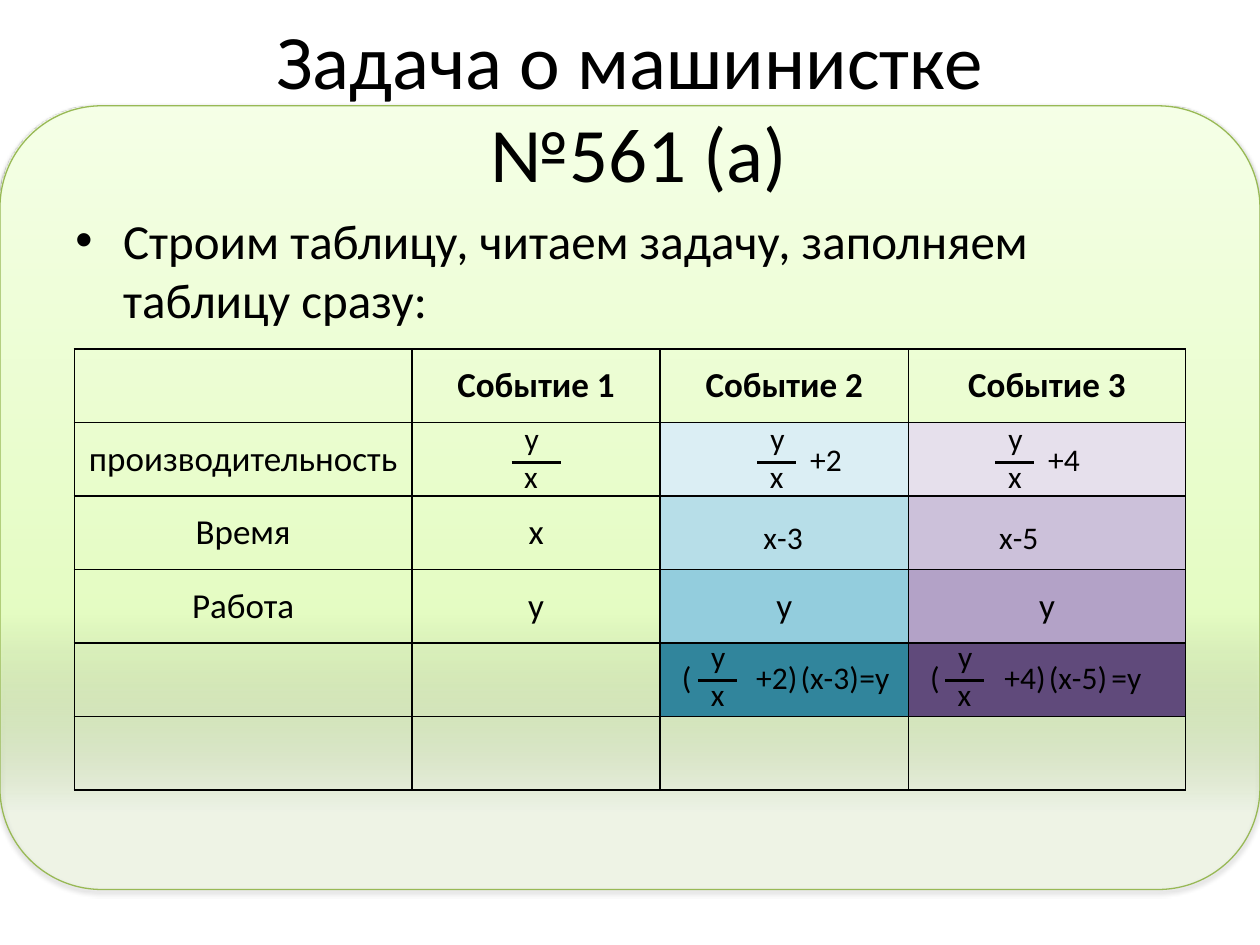
from lxml.etree import SubElement
from pptx import Presentation
from pptx.dml.color import RGBColor
from pptx.enum.shapes import MSO_CONNECTOR, MSO_SHAPE
from pptx.enum.text import MSO_ANCHOR, MSO_AUTO_SIZE, PP_ALIGN
from pptx.oxml import parse_xml
from pptx.oxml.ns import nsdecls, qn
from pptx.util import Inches, Pt

prs = Presentation()
prs.slide_width, prs.slide_height = Inches(10), Inches(7.5)
W, H = prs.slide_width, prs.slide_height
s = prs.slides.add_slide(prs.slide_layouts[5])


def share(x, y, w, h):
    return int(W * x / 100), int(H * y / 100), int(W * w / 100), int(H * h / 100)


def style(p, size, bold=False, align=PP_ALIGN.CENTER):
    p.alignment = align
    for r in p.runs:
        r.font.name, r.font.size, r.font.bold = "Calibri", Pt(size), bold
        r.font.color.rgb = RGBColor.from_string("000000")


card = s.shapes.add_shape(MSO_SHAPE.ROUNDED_RECTANGLE, *share(0, 11.2, 100, 82.93))
card.adjustments[0] = 0.13
card.line.color.rgb = RGBColor.from_string("98B955")
card.line.width = Pt(0.75)
card.fill.gradient()
card.fill.gradient_angle = 90
stops = card._element.spPr.find(qn("a:gradFill")).find(qn("a:gsLst"))
for stop in list(stops):
    stops.remove(stop)
for pos, color, alpha in ((10, "DAFDA7", 14), (35, "E4FCC2", 100), (100, "F5FFE7", 100)):
    stop = SubElement(stops, qn("a:gs"), pos=str(pos * 1000))
    rgb = SubElement(stop, qn("a:srgbClr"), val=color)
    if alpha < 100:
        SubElement(rgb, qn("a:alpha"), val=str(alpha * 1000))
card._element.spPr.append(parse_xml(
    f'<a:effectLst {nsdecls("a")}><a:outerShdw blurRad="{Pt(3.1)}" dist="{Pt(1.6)}" '
    'dir="5400000" rotWithShape="0"><a:srgbClr val="000000"><a:alpha val="38000"/>'
    '</a:srgbClr></a:outerShdw></a:effectLst>'))
s.shapes._spTree.insert(2, card._element)

title = s.shapes.title
title.left, title.top, title.width, title.height = share(5.7, -0.4, 90, 23.07)
tf = title.text_frame
tf.text = "Задача о машинистке \v№561 (а)"
tf.vertical_anchor = MSO_ANCHOR.MIDDLE
tf.auto_size = MSO_AUTO_SIZE.NONE
style(tf.paragraphs[0], 44)

body = s.shapes.add_textbox(*share(5, 21.6, 90, 66))
tf = body.text_frame
tf.word_wrap = True
tf.text = "Строим таблицу, читаем задачу, заполняем таблицу сразу:"
p = tf.paragraphs[0]
style(p, 28, align=PP_ALIGN.LEFT)
p.space_before = Pt(5.6)
pPr = p._p.get_or_add_pPr()
pPr.set("marL", str(Inches(0.38)))
pPr.set("indent", str(-Inches(0.38)))
SubElement(pPr, qn("a:buFont"), typeface="Arial")
SubElement(pPr, qn("a:buChar"), char="•")

rows = [
    ["", "Событие 1", "Событие 2", "Событие 3"],
    ["производительность", "", "", ""],
    ["Время", "х", "", ""],
    ["Работа", "у", "у", "у"],
    ["", "", "", ""],
    ["", "", "", ""],
]
fills = {
    2: ["DBEEF4", "B7DEE8", "93CDDD", "31859C"],
    3: ["E6E0EC", "CCC1DA", "B3A2C7", "604A7B"],
}
table = s.shapes.add_table(6, 4, *share(5.9, 36.93, 88.2, 46.67)).table
table.first_row = table.horz_banding = False
for column, width in zip(table.columns, (26.8, 19.7, 19.7, 22)):
    column.width = int(W * width / 100)
for i, row in enumerate(rows):
    for j, text in enumerate(row):
        cell = table.cell(i, j)
        cell.text = text
        cell.vertical_anchor = MSO_ANCHOR.MIDDLE
        style(cell.text_frame.paragraphs[0], 20, bold=i == 0)
        tcPr = cell._tc.get_or_add_tcPr()
        for side in ("lnL", "lnR", "lnT", "lnB"):
            ln = SubElement(tcPr, qn(f"a:{side}"), w=str(Pt(1)))
            SubElement(SubElement(ln, qn("a:solidFill")), qn("a:srgbClr"), val="000000")
        if j in fills and 1 <= i <= 4:
            cell.fill.solid()
            cell.fill.fore_color.rgb = RGBColor.from_string(fills[j][i - 1])
        else:
            cell.fill.background()

rate, product = 43.73, 66.8
labels = [
    ("х-3", 58.7, 54.13, 6.9), ("х-5", 77.4, 54.13, 6.9),
    ("+2", 63.2, rate + 2.13, 4.7), ("+4", 82.1, rate + 2.13, 4.7),
]
for x, n, t, end in ((53.1, "+2)", "(х-3)", 67.2), (72.8, "+4)", "(х-5)", 87.2)):
    y = product + 2.13
    labels += [("(", x, y, 2.8), (n, x + 5.4, y, 6.3), (t, x + 9.3, y, 6.9), ("=у", end, y, 4.4)]

fractions = [(40.6, rate, 3.9), (60.1, rate, 3.1), (79, rate, 3.1),
             (55.4, product, 3.1), (75, product, 3.1)]
for x, y, width in fractions:
    labels += [("у", x, y, 3.2), ("х", x, y + 4, 3.1)]
    left, top, length, _ = share(x, y + 5.2, width, 0)
    bar = s.shapes.add_connector(MSO_CONNECTOR.STRAIGHT, left, top, left + length, top)
    bar.line.color.rgb = RGBColor.from_string("000000")
    bar.line.width = Pt(1.5)
    SubElement(bar._element.spPr, qn("a:effectLst"))

for text, x, y, width in labels:
    tf = s.shapes.add_textbox(*share(x, y, width, 5.33)).text_frame
    tf.text = text
    tf.word_wrap = False
    tf.auto_size = MSO_AUTO_SIZE.SHAPE_TO_FIT_TEXT
    style(tf.paragraphs[0], 18)

prs.save("out.pptx")
